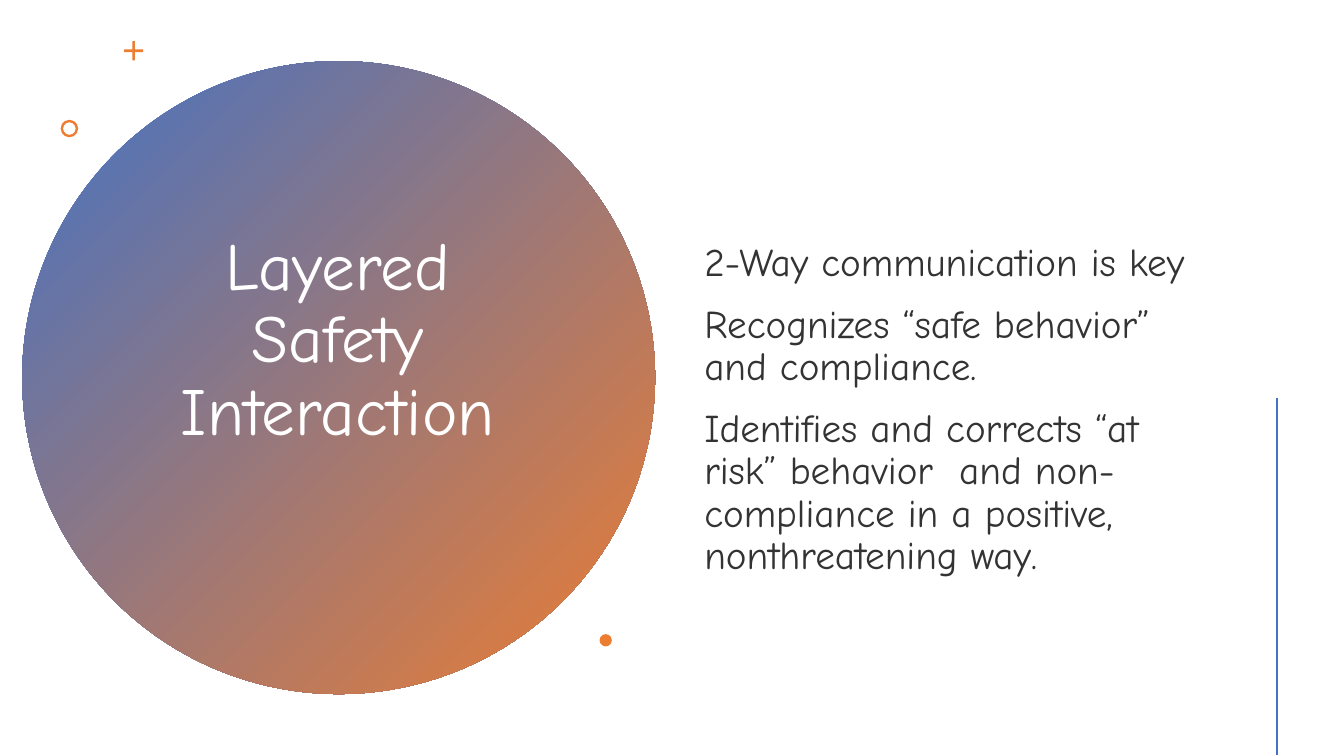
from pptx import Presentation, util as u
from pptx.dml.color import RGBColor
from pptx.enum import shapes, text
from pptx.oxml.ns import qn
from lxml import etree

BLUE, ORANGE, WHITE, GREY = "4472C4", "ED7D31", "FFFFFF", "333333"
FONT = "Comic Neue"


def color(value):
    return RGBColor.from_string(value)


def add_text(area, lines, frame_format, paragraph_format, font_format, font_color):
    """Add a text box with one paragraph per line; space goes between paragraphs."""
    frame = page.shapes.add_textbox(*map(u.Cm, area)).text_frame
    for name, value in frame_format.items():
        setattr(frame, name, value)
    for index, line in enumerate(lines):
        para = frame.add_paragraph() if index else frame.paragraphs[0]
        for name, value in paragraph_format.items():
            if index or name != "space_before":
                setattr(para, name, value)
        span = para.add_run()
        span.text = line
        for name, value in font_format.items():
            setattr(span.font, name, value)
        span.font.color.rgb = color(font_color)


deck = Presentation()
deck.slide_width, deck.slide_height = u.Cm(33.87), u.Cm(19.05)
page = deck.slides.add_slide(deck.slide_layouts[6])

# Large circle and small ornaments: preset, area, adjustment, fill
preset = shapes.MSO_SHAPE
ornaments = [
    (preset.OVAL, (0.56, 1.54, 15.95, 15.95), None, (BLUE, ORANGE)),
    (preset.CROSS, (3.13, 1.04, 0.48, 0.48), 0.43, (ORANGE,)),
    (preset.DONUT, (1.53, 3.02, 0.44, 0.44), 0.14, (ORANGE,)),
    (preset.OVAL, (15.11, 15.98, 0.31, 0.31), None, (ORANGE,)),
]
for kind, area, adjustment, fills in ornaments:
    ornament = page.shapes.add_shape(kind, *map(u.Cm, area))
    ornament.shadow.inherit = False
    ornament.line.fill.background()
    if adjustment:
        ornament.adjustments[0] = adjustment
    if len(fills) > 1:
        ornament.fill.gradient()
        ornament.fill.gradient_angle = 315
        for stop, value in zip(ornament.fill.gradient_stops, fills):
            stop.color.rgb = color(value)
    else:
        ornament.fill.solid()
        ornament.fill.fore_color.rgb = color(fills[0])

# Title and body text
middle = {"word_wrap": True, "vertical_anchor": text.MSO_ANCHOR.MIDDLE}
add_text(
    (3.45, 3.58, 10.13, 11.86),
    ["Layered Safety Interaction"],
    {**middle, "margin_bottom": u.Cm(1.96)},
    {"alignment": text.PP_ALIGN.CENTER, "line_spacing": 0.9},
    {"name": FONT, "size": u.Pt(48)},
    WHITE,
)
add_text(
    (17.5, 1.45, 13.26, 16.21),
    [
        "2-Way communication is key",
        "Recognizes “safe behavior” and compliance.",
        "Identifies and corrects “at risk” behavior  and non-compliance "
        "in a positive, nonthreatening way.",
    ],
    {**middle, "margin_top": u.Cm(1.69)},
    {"line_spacing": 0.9, "space_before": u.Pt(14)},
    {"name": FONT, "size": u.Pt(28)},
    GREY,
)

# Vertical accent line
accent = page.shapes.add_connector(
    shapes.MSO_CONNECTOR.STRAIGHT, *map(u.Cm, (32.18, 10.03, 32.18, 19.03))
)
accent.line.color.rgb = color(BLUE)
accent.line.width = u.Pt(2)
etree.SubElement(accent._element.spPr, qn("a:effectLst"))

deck.save("out.pptx")
